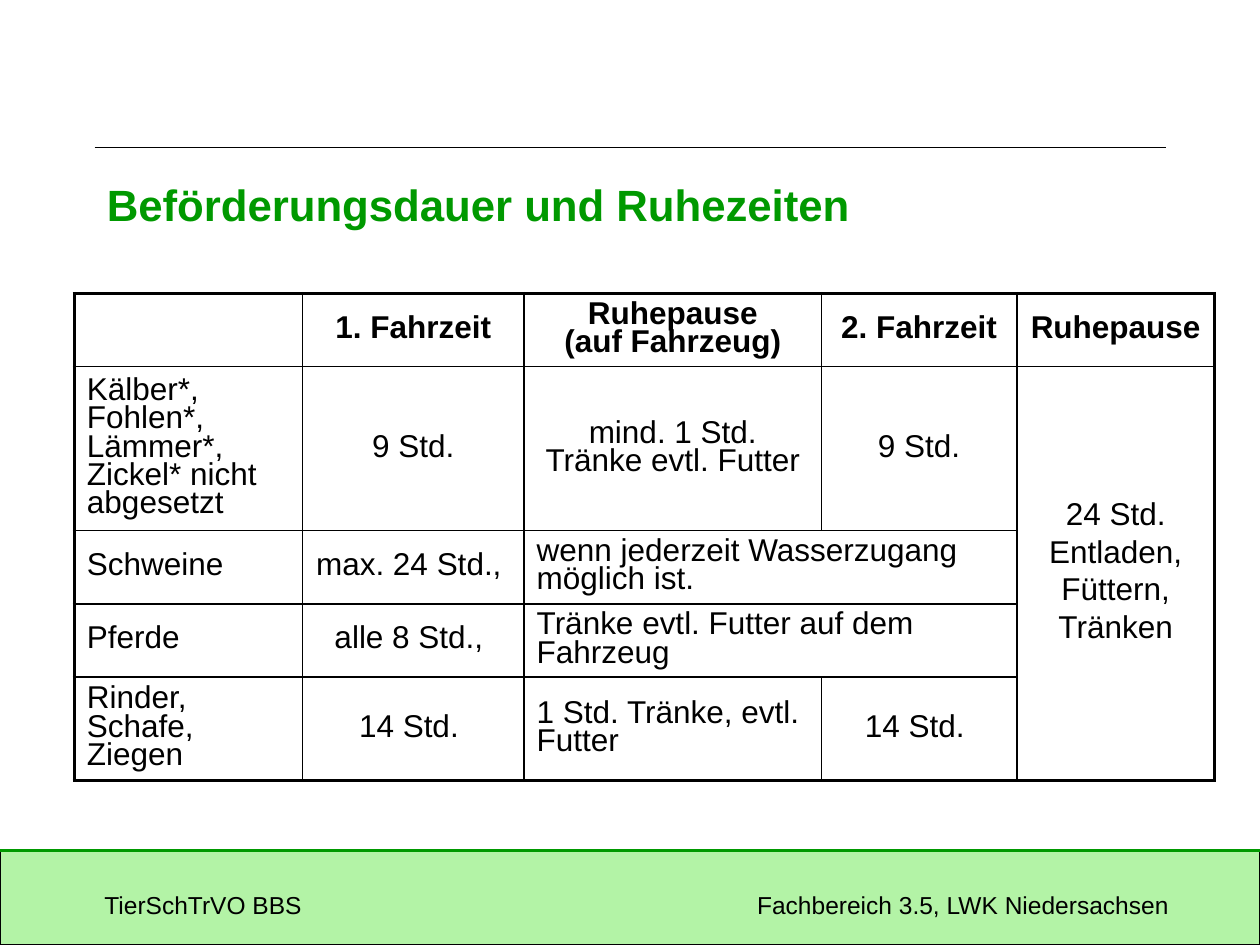
from lxml.etree import SubElement
from pptx import Presentation
from pptx.dml.color import RGBColor
from pptx.enum.shapes import MSO_CONNECTOR, MSO_SHAPE
from pptx.enum.text import MSO_ANCHOR, PP_ALIGN
from pptx.oxml.ns import qn
from pptx.util import Inches, Pt

BLACK = RGBColor(0x00, 0x00, 0x00)
GREEN = RGBColor(0x00, 0x99, 0x00)
PALE_GREEN = RGBColor(0xB3, 0xF3, 0xA6)
FONT = "Arial"

COLUMN_WIDTHS = [1.81, 1.76, 2.36, 1.55, 1.57]
ROW_HEIGHTS = [0.58, 1.3, 0.58, 0.58, 0.82]
ROWS = [
    ["", "1. Fahrzeit", "Ruhepause\v(auf Fahrzeug)", "2. Fahrzeit", "Ruhepause"],
    ["Kälber*, Fohlen*, Lämmer*, Zickel* nicht abgesetzt", "9 Std.",
     "mind. 1 Std. Tränke evtl. Futter", "9 Std.",
     "24 Std.\nEntladen,\nFüttern,\nTränken"],
    ["Schweine", "max. 24 Std., ", "wenn jederzeit Wasserzugang möglich ist.", "", ""],
    ["Pferde", "alle 8 Std., ", "Tränke evtl. Futter auf dem Fahrzeug", "", ""],
    ["Rinder, Schafe, Ziegen", "14 Std. ", "1 Std. Tränke, evtl. Futter", "14 Std. ", ""],
]
LEFT_ALIGNED = {(1, 0), (2, 0), (3, 0), (4, 0), (2, 2), (3, 2), (4, 2)}
MERGES = [((1, 4), (4, 4)), ((2, 2), (2, 3)), ((3, 2), (3, 3))]


def style_font(paragraph, size, color=BLACK, bold=False):
    font = paragraph.font
    font.name = FONT
    font.size = Pt(size)
    font.bold = bold
    font.color.rgb = color


def add_rule(slide, left, top, width, color, weight):
    line = slide.shapes.add_connector(
        MSO_CONNECTOR.STRAIGHT, Inches(left), Inches(top), Inches(left + width), Inches(top))
    line.line.color.rgb = color
    line.line.width = Pt(weight)
    SubElement(line._element.spPr, qn("a:effectLst"))


def add_text_box(slide, left, top, width, height, text):
    box = slide.shapes.add_textbox(Inches(left), Inches(top), Inches(width), Inches(height))
    frame = box.text_frame
    frame.word_wrap = True
    frame.vertical_anchor = MSO_ANCHOR.MIDDLE
    frame.text = text
    return frame.paragraphs[0]


def add_footer(slide, left, top, width, height):
    band = slide.shapes.add_shape(
        MSO_SHAPE.RECTANGLE, Inches(left), Inches(top), Inches(width), Inches(height))
    band.shadow.inherit = False
    band.fill.solid()
    band.fill.fore_color.rgb = PALE_GREEN
    band.line.color.rgb = BLACK
    band.line.width = Pt(0.75)
    add_rule(slide, left, top, width, GREEN, 2)
    paragraph = add_text_box(slide, left + 0.73, top + 0.25, width - 1.35, 0.36,
                             "TierSchTrVO BBS\tFachbereich 3.5, LWK Niedersachsen")
    tabs = SubElement(paragraph._p.get_or_add_pPr(), qn("a:tabLst"))
    SubElement(tabs, qn("a:tab"), pos=str(Inches(8.45)), algn="r")
    style_font(paragraph, 14)


def add_heading(slide, left, top, width, height):
    add_rule(slide, left, top, width, BLACK, 1)
    paragraph = add_text_box(slide, left, top + 0.16, width, height - 0.16,
                             "Beförderungsdauer und Ruhezeiten")
    style_font(paragraph, 25, GREEN, True)


def set_borders(cell, weights):
    properties = cell._tc.get_or_add_tcPr()
    for index, (side, weight) in enumerate(weights.items()):
        border = properties.makeelement(qn(f"a:ln{side}"), {"w": str(Pt(weight))})
        fill = SubElement(border, qn("a:solidFill"))
        SubElement(fill, qn("a:srgbClr"), val=str(BLACK))
        properties.insert(index, border)


def fill_cell(cell, text, alignment, bold):
    cell.fill.background()
    cell.vertical_anchor = MSO_ANCHOR.MIDDLE
    cell.text_frame.text = text
    for index, paragraph in enumerate(cell.text_frame.paragraphs):
        paragraph.alignment = alignment
        paragraph.line_spacing = 0.8
        if index:
            paragraph.space_before = Pt(5.4)
        style_font(paragraph, 18, bold=bold)


def add_times_table(slide, left, top, width, height):
    last_row, last_column = len(ROWS) - 1, len(COLUMN_WIDTHS) - 1
    table = slide.shapes.add_table(
        len(ROWS), len(COLUMN_WIDTHS),
        Inches(left), Inches(top), Inches(width), Inches(height)).table
    table.first_row = False
    table.horz_banding = False
    for column, column_width in zip(table.columns, COLUMN_WIDTHS):
        column.width = Inches(column_width)
    for row, row_height in zip(table.rows, ROW_HEIGHTS):
        row.height = Inches(row_height)
    for start, end in MERGES:
        table.cell(*start).merge(table.cell(*end))
    for r, texts in enumerate(ROWS):
        for c, text in enumerate(texts):
            cell = table.cell(r, c)
            alignment = PP_ALIGN.LEFT if (r, c) in LEFT_ALIGNED else PP_ALIGN.CENTER
            fill_cell(cell, text, alignment, r == 0)
            bottom_row = r + cell.span_height - 1 if cell.is_merge_origin else r
            outer = {"L": c == 0, "R": c == last_column,
                     "T": r == 0, "B": bottom_row == last_row}
            set_borders(cell, {side: 2.25 if edge else 1 for side, edge in outer.items()})


def main():
    presentation = Presentation()
    presentation.slide_width = Inches(10)
    presentation.slide_height = Inches(7.5)
    slide = presentation.slides.add_slide(presentation.slide_layouts[6])
    add_footer(slide, 0, 6.75, 10, 0.75)
    add_heading(slide, 0.75, 1.17, 8.5, 0.74)
    add_times_table(slide, 0.59, 2.33, sum(COLUMN_WIDTHS), sum(ROW_HEIGHTS))
    presentation.save("out.pptx")


if __name__ == "__main__":
    main()
